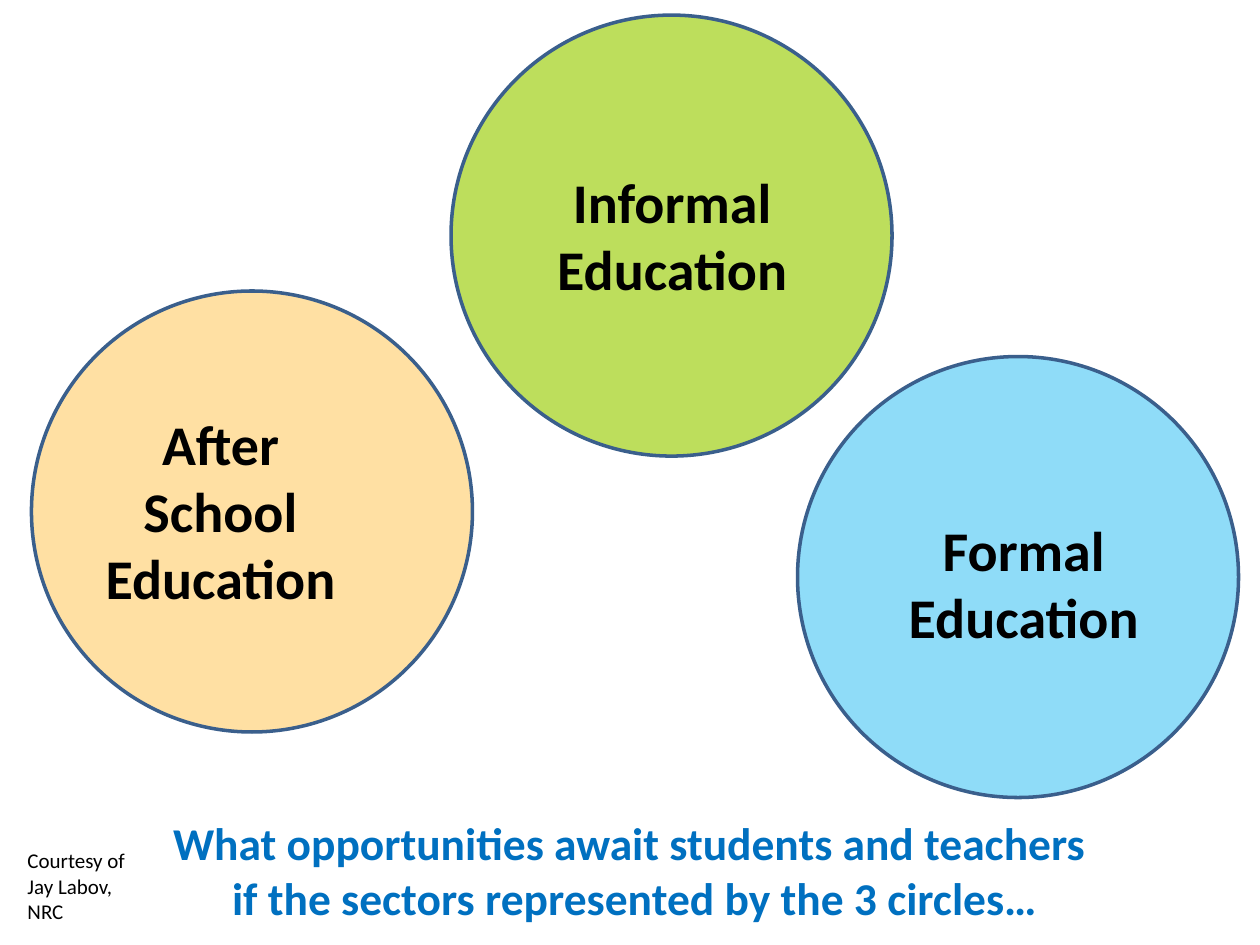
import pptx
import pptx.dml.color
import pptx.enum.shapes
import pptx.enum.text
import pptx.oxml
import pptx.oxml.ns
import pptx.util

Inches = pptx.util.Inches
RGBColor = pptx.dml.color.RGBColor
PP_ALIGN = pptx.enum.text.PP_ALIGN

GREEN = RGBColor(0x99, 0xCC, 0x00)
ORANGE = RGBColor(0xFF, 0xCC, 0x66)
SKY = RGBColor(0x00, 0xB0, 0xF0)
OUTLINE = RGBColor(0x3A, 0x5F, 0x8C)
BLACK = RGBColor(0, 0, 0)
BLUE = RGBColor(0x00, 0x70, 0xC0)

DIAMETER = 3.5
SECTORS = [
    ((3.58, 0.12), GREEN, 64, "Informal Education", (0.61, 1.16, 2.29, 1.18)),
    ((0.25, 2.31), ORANGE, 60, "After\nSchool\nEducation", (0.44, 0.89, 2.12, 1.72)),
    ((6.33, 2.83), SKY, 44, "Formal Education", (0.75, 1.21, 2.09, 1.18)),
]


def add_text(shapes, box, text, size, color, bold=False, align=PP_ALIGN.LEFT):
    sp = shapes.add_textbox(*map(Inches, box))
    tf = sp.text_frame
    tf.word_wrap = True
    tf.auto_size = pptx.enum.text.MSO_AUTO_SIZE.SHAPE_TO_FIT_TEXT
    tf.text = text
    for p in tf.paragraphs:
        p.alignment = align
        for r in p.runs:
            r.font.name = "Calibri"
            r.font.size = pptx.util.Pt(size)
            r.font.bold = bold
            r.font.color.rgb = color


def set_opacity(sp, percent):
    color = sp.fill._xPr.find(".//" + pptx.oxml.ns.qn("a:srgbClr"))
    alpha = pptx.oxml.parse_xml(
        f'<a:alpha {pptx.oxml.ns.nsdecls("a")} val="{percent * 1000}"/>'
    )
    color.append(alpha)


def add_sector(s, origin, color, opacity, label, label_box):
    left, top = origin
    group = s.shapes.add_group_shape()
    circle = group.shapes.add_shape(
        pptx.enum.shapes.MSO_SHAPE.OVAL,
        Inches(left), Inches(top), Inches(DIAMETER), Inches(DIAMETER),
    )
    circle.shadow.inherit = False
    circle.fill.solid()
    circle.fill.fore_color.rgb = color
    set_opacity(circle, opacity)
    circle.line.color.rgb = OUTLINE
    circle.line.width = pptx.util.Pt(2)
    dx, dy, width, height = label_box
    add_text(group.shapes, (left + dx, top + dy, width, height), label,
             32, BLACK, True, PP_ALIGN.CENTER)


def add_footer(s, left, top, width, height):
    question = ("What opportunities await students and teachers \n"
                "if the sectors represented by the 3 circles…")
    add_text(s.shapes, (left + 0.17, top, width - 0.17, height), question,
             26, BLUE, True, PP_ALIGN.CENTER)
    add_text(s.shapes, (left, top + 0.26, 1.13, 0.71),
             "Courtesy of Jay Labov, NRC", 12, BLACK)


def main():
    prs = pptx.Presentation()
    prs.slide_width = Inches(10)
    prs.slide_height = Inches(7.5)
    s = prs.slides.add_slide(prs.slide_layouts[6])
    for sector in SECTORS:
        add_sector(s, *sector)
    add_footer(s, 0.12, 6.42, 9.67, 0.98)
    prs.save("out.pptx")


if __name__ == "__main__":
    main()
